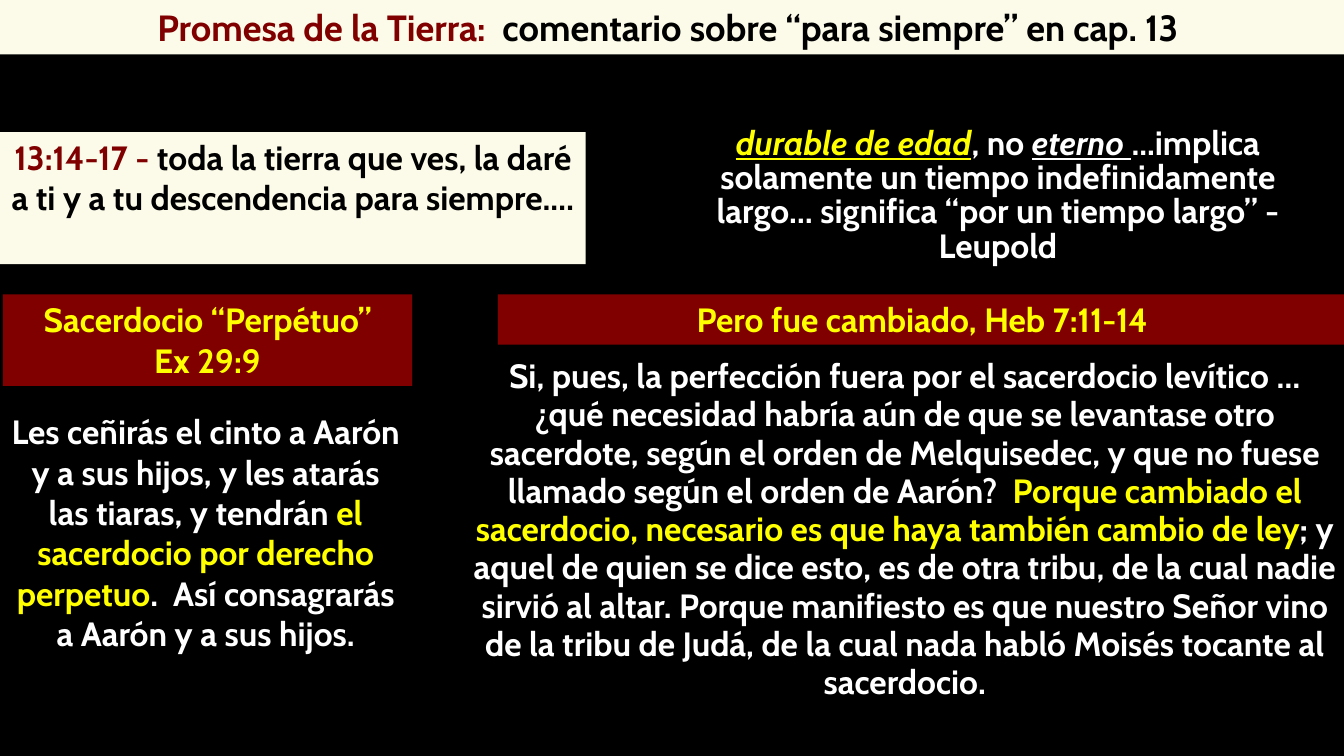
from pptx import Presentation
from pptx.dml.color import RGBColor
from pptx.enum.shapes import MSO_SHAPE
from pptx.enum.text import MSO_ANCHOR, PP_ALIGN
from pptx.util import Inches, Pt

RECT = MSO_SHAPE.RECTANGLE
TOP = MSO_ANCHOR.TOP
CENTER = PP_ALIGN.CENTER

COLORS = {
    "black": "000000",
    "cream": "FCFBEA",
    "maroon": "800000",
    "yellow": "FFFF00",
    "white": "FFFFFF",
}


def rgb(name):
    return RGBColor.from_string(COLORS[name])


class Deck:
    """Style and current slide; boxes are (left, top, width, height) in percent."""

    font = "Cabin"
    size = 24

    def __init__(self):
        self.prs = Presentation()
        self.prs.slide_width = Inches(13.33)
        self.prs.slide_height = Inches(7.5)

    def add_slide(self, background):
        self.s = self.prs.slides.add_slide(self.prs.slide_layouts[6])
        fill = self.s.background.fill
        fill.solid()
        fill.fore_color.rgb = rgb(background)

    def place(self, box):
        sides = (self.prs.slide_width, self.prs.slide_height) * 2
        return [round(side * share / 100) for side, share in zip(sides, box)]

    def fill_text(self, sp, paragraphs, size=None, spacing=None):
        """Each run is (text, color) or (text, color, emphasized)."""
        tf = sp.text_frame
        tf.word_wrap = True
        tf.vertical_anchor = TOP
        for i, runs in enumerate(paragraphs):
            p = tf.add_paragraph() if i else tf.paragraphs[0]
            p.alignment = CENTER
            if spacing:
                p.line_spacing = spacing
            for text, color, *emphasis in runs:
                r = p.add_run()
                r.text = text
                r.font.name = self.font
                r.font.size = Pt(size or self.size)
                r.font.bold = True
                r.font.color.rgb = rgb(color)
                if emphasis:
                    r.font.italic = r.font.underline = True

    def panel(self, box, fill, *paragraphs, **style):
        sp = self.s.shapes.add_shape(RECT, *self.place(box))
        sp.shadow.inherit = False
        sp.fill.solid()
        sp.fill.fore_color.rgb = rgb(fill)
        sp.line.fill.background()
        self.fill_text(sp, paragraphs, **style)

    def text(self, box, *paragraphs, **style):
        sp = self.s.shapes.add_textbox(*self.place(box))
        self.fill_text(sp, paragraphs, **style)


def main():
    deck = Deck()
    deck.add_slide("black")

    # Title band
    deck.panel((-0.6, 0, 100.65, 7.2), "cream", [
        ("Promesa de la Tierra:  ", "maroon"),
        ("comentario sobre “para siempre” en cap. 13", "black"),
    ], size=26)

    # Promise and commentary
    deck.panel((0, 17.47, 43.58, 17.47), "cream", [
        ("13:14-17 - ", "maroon"),
        ("toda la tierra que ves, la daré a ti y a tu descendencia "
         "para siempre.…", "black"),
    ])
    deck.text((50.1, 16.27, 48.3, 19.6), [
        ("durable de edad", "yellow", True),
        (", no ", "white"),
        ("eterno ", "white", True),
        ("...implica solamente un tiempo indefinidamente largo… "
         "significa “por un tiempo largo” - Leupold", "white"),
    ], spacing=0.85)

    # Headings of the two columns
    deck.panel((0.22, 38.93, 30.45, 12.13), "maroon",
               [("Sacerdocio “Perpétuo”", "yellow")],
               [("Ex 29:9", "yellow")])
    deck.panel((37.05, 38.93, 63.15, 6.67), "maroon",
               [("Pero fue cambiado, Heb 7:11-14", "yellow")])

    # Passages
    deck.text((0, 53.73, 30.6, 39.07), [
        ("Les ceñirás el cinto a Aarón y a sus hijos, y les atarás "
         "las tiaras, y tendrán ", "white"),
        ("el sacerdocio por derecho perpetuo", "yellow"),
        (".  Así consagrarás a Aarón y a sus hijos.", "white"),
    ])
    deck.text((34.43, 46.67, 65.78, 52.53), [
        ("Si, pues, la perfección fuera por el sacerdocio levítico … "
         "¿qué necesidad habría aún de que se levantase otro sacerdote, "
         "según el orden de Melquisedec, y que no fuese llamado según "
         "el orden de Aarón?  ", "white"),
        ("Porque cambiado el sacerdocio, necesario es que haya también "
         "cambio de ley", "yellow"),
        ("; y aquel de quien se dice esto, es de otra tribu, de la cual "
         "nadie sirvió al altar. Porque manifiesto es que nuestro Señor "
         "vino de la tribu de Judá, de la cual nada habló Moisés tocante "
         "al sacerdocio.", "white"),
    ], spacing=0.95)

    deck.prs.save("out.pptx")


if __name__ == "__main__":
    main()
